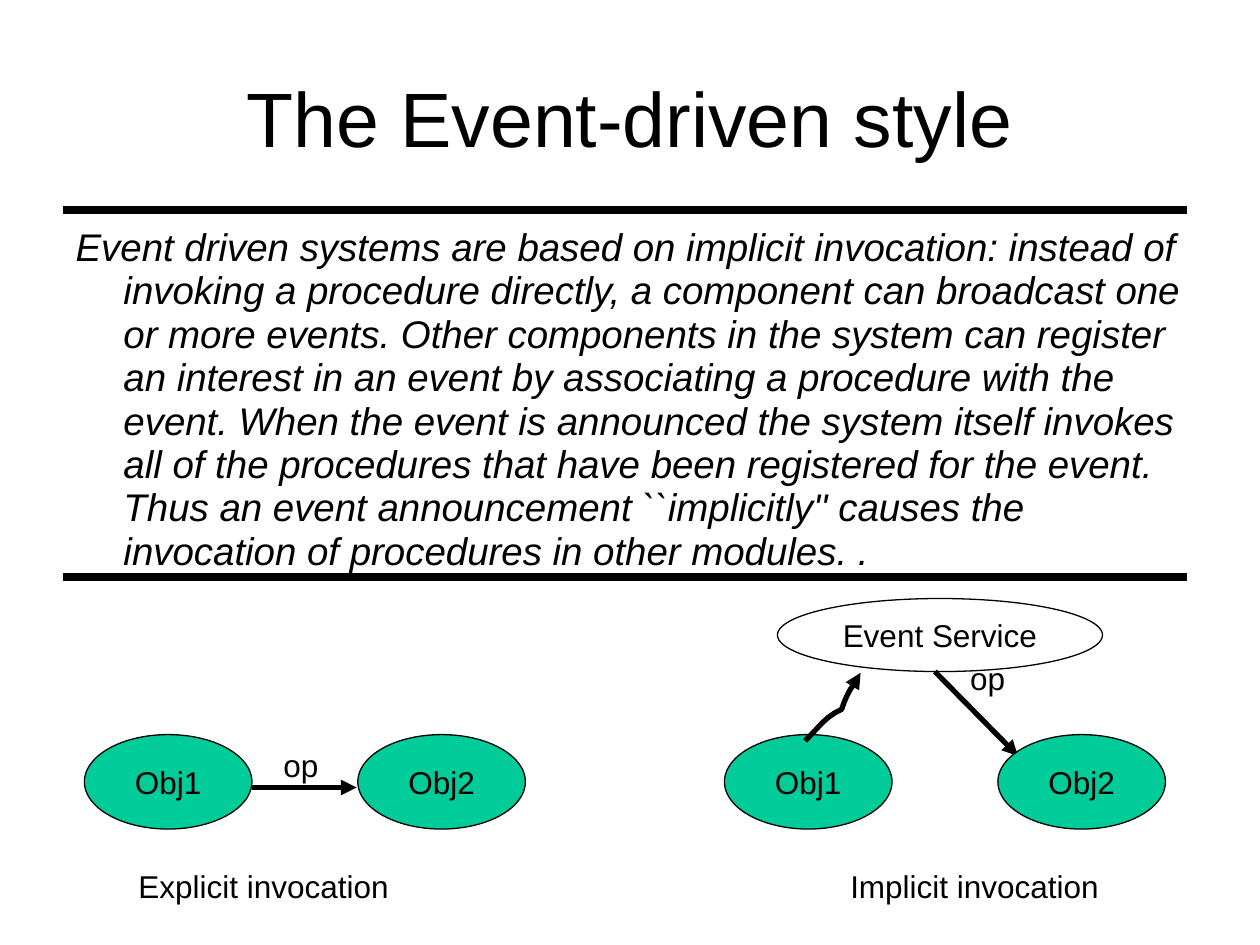
from dataclasses import dataclass
from typing import Optional

from pptx import Presentation
from pptx.dml.color import RGBColor
from pptx.enum.shapes import MSO_CONNECTOR, MSO_SHAPE
from pptx.enum.text import MSO_ANCHOR, MSO_AUTO_SIZE, PP_ALIGN
from pptx.oxml.ns import qn
from pptx.util import Inches, Pt
from lxml.etree import SubElement

BLACK = "000000"
GREEN = "00CC99"
Point = tuple[float, float]


@dataclass
class Oval:
    text: str
    left: float
    top: float
    width: float = 1.33
    height: float = 0.75
    fill: Optional[str] = GREEN


@dataclass
class Label:
    text: str
    left: float
    top: float
    width: float


@dataclass
class Line:
    start: Point
    end: Point
    weight: float
    arrow: bool = False


OBJECT_TOP = 5.83
OBJECT_GAP = 2.17
OVALS = [Oval(f"Obj{i + 1}", left + i * OBJECT_GAP, OBJECT_TOP)
         for left in (0.67, 5.75) for i in range(2)]
OVALS.append(Oval("Event Service", 6.17, 4.75, 2.58, 0.58, None))

LINES = [Line((0.5, y), (9.42, y), 4.5) for y in (1.67, 4.58)]
LINES += [Line((2, 6.25), (2.83, 6.25), 3, True),
          Line((7.42, 5.33), (8.08, 6), 3, True)]

LABELS = [
    Label("op", 2.15, 5.87, 0.48),
    Label("op", 7.6, 5.18, 0.48),
    Label("Explicit invocation", 1, 6.83, 2.19),
    Label("Implicit invocation", 6.65, 6.83, 2.17),
]

# Start point, then two control points and an end point per curve
ANNOUNCE = [(6.39, 5.88),
            (6.52, 5.75), (6.55, 5.69), (6.68, 5.63),
            (6.7, 5.57), (6.72, 5.52), (6.75, 5.47),
            (6.77, 5.44), (6.79, 5.41), (6.81, 5.38),
            (6.81, 5.37), (6.83, 5.34), (6.83, 5.34)]

BODY = (
    "Event driven systems are based on implicit invocation: instead of "
    "invoking a procedure directly, a component can broadcast one or more "
    "events. Other components in the system can register an interest in an "
    "event by associating a procedure with the event. When the event is "
    "announced the system itself invokes all of the procedures that have "
    "been registered for the event. Thus an event announcement "
    "``implicitly'' causes the invocation of procedures in other modules. ."
)


def color(value: str) -> RGBColor:
    return RGBColor.from_string(value)


def write(tf, text: str, size: float, align=PP_ALIGN.LEFT, italic=False):
    tf.text = text
    p = tf.paragraphs[0]
    p.alignment = align
    font = p.runs[0].font
    font.name, font.size, font.italic = "Arial", Pt(size), italic
    font.color.rgb = color(BLACK)
    return p


def place(sp, left: float, top: float, width: float, height: float) -> None:
    sp.left, sp.top = Inches(left), Inches(top)
    sp.width, sp.height = Inches(width), Inches(height)


def stroke(sp, weight: float, arrow: bool = False) -> None:
    sp.line.color.rgb = color(BLACK)
    sp.line.width = Pt(weight)
    if arrow:
        SubElement(sp.line._get_or_add_ln(), qn("a:tailEnd"), type="triangle")


def add_oval(s, oval: Oval) -> None:
    sp = s.shapes.add_shape(MSO_SHAPE.OVAL, Inches(oval.left), Inches(oval.top),
                            Inches(oval.width), Inches(oval.height))
    sp.shadow.inherit = False
    if oval.fill:
        sp.fill.solid()
        sp.fill.fore_color.rgb = color(oval.fill)
    else:
        sp.fill.background()
    stroke(sp, 0.75)
    tf = sp.text_frame
    tf.word_wrap = False
    tf.vertical_anchor = MSO_ANCHOR.MIDDLE
    write(tf, oval.text, 18, PP_ALIGN.CENTER)


def add_line(s, line: Line) -> None:
    ends = [Inches(v) for v in (*line.start, *line.end)]
    sp = s.shapes.add_connector(MSO_CONNECTOR.STRAIGHT, *ends)
    stroke(sp, line.weight, line.arrow)
    SubElement(sp._element.spPr, qn("a:effectLst"))


def add_label(s, label: Label) -> None:
    sp = s.shapes.add_textbox(Inches(label.left), Inches(label.top),
                              Inches(label.width), Inches(0.4))
    tf = sp.text_frame
    tf.word_wrap = False
    tf.auto_size = MSO_AUTO_SIZE.SHAPE_TO_FIT_TEXT
    write(tf, label.text, 18)


def bezier(a: Point, b: Point, c: Point, d: Point, t: float) -> Point:
    weights = ((1 - t) ** 3, 3 * t * (1 - t) ** 2, 3 * t * t * (1 - t), t ** 3)
    x, y = (sum(w * v for w, v in zip(weights, axis)) for axis in zip(a, b, c, d))
    return x, y


def add_curved_arrow(s, nodes: list[Point], steps: int = 6) -> None:
    points = [bezier(*nodes[i:i + 4], k / steps)
              for i in range(0, len(nodes) - 1, 3) for k in range(1, steps + 1)]
    builder = s.shapes.build_freeform(*nodes[0], scale=Inches(1))
    # Whole EMU keep the fine steps of the curve
    builder = s.shapes.build_freeform(*(Inches(v) for v in nodes[0]))
    builder.add_line_segments([(Inches(x), Inches(y)) for x, y in points], close=False)
    sp = builder.convert_to_shape()
    sp.shadow.inherit = False
    sp.fill.background()
    stroke(sp, 3, True)


def add_title_and_body(s) -> None:
    title, body = s.placeholders
    place(title, 0.5, 0.3, 9, 1.25)
    title.text_frame.vertical_anchor = MSO_ANCHOR.MIDDLE
    write(title.text_frame, "The Event-driven style", 44, PP_ALIGN.CENTER)

    place(body, 0.5, 1.75, 9, 2.66)
    body.text_frame.auto_size = MSO_AUTO_SIZE.NONE
    p = write(body.text_frame, BODY, 22, italic=True)
    p.line_spacing = 0.94
    p.space_before = Pt(0)
    pPr = p._p.get_or_add_pPr()
    pPr.set("marL", str(Inches(0.38)))
    pPr.set("indent", str(Inches(-0.38)))
    SubElement(pPr, qn("a:buNone"))


def main() -> None:
    prs = Presentation()
    prs.slide_width, prs.slide_height = Inches(10), Inches(7.5)
    s = prs.slides.add_slide(prs.slide_layouts[1])
    add_title_and_body(s)
    for line in LINES:
        add_line(s, line)
    for oval in OVALS:
        add_oval(s, oval)
    for label in LABELS:
        add_label(s, label)
    add_curved_arrow(s, ANNOUNCE)
    prs.save("out.pptx")


if __name__ == "__main__":
    main()
